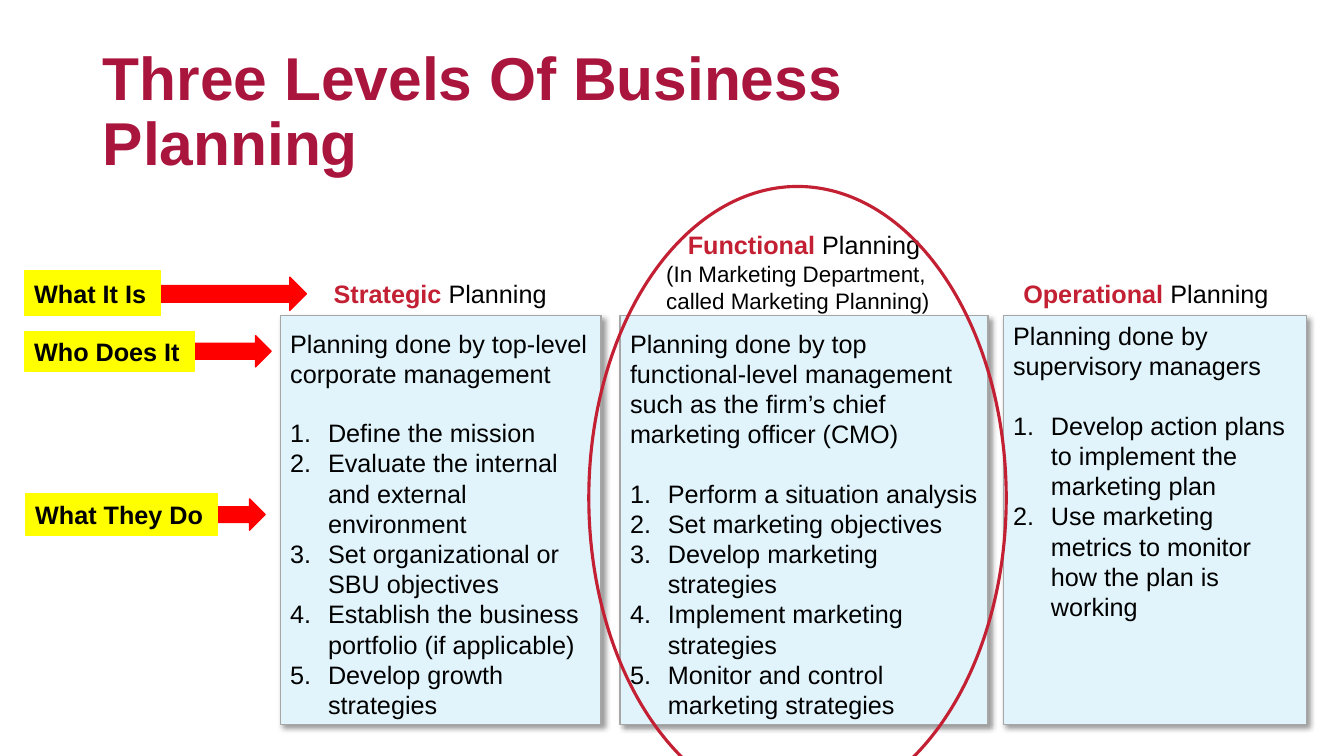
from dataclasses import dataclass

from lxml import etree
from pptx import Presentation
from pptx.dml.color import RGBColor
from pptx.enum.shapes import MSO_SHAPE
from pptx.enum.text import MSO_ANCHOR, MSO_AUTO_SIZE, PP_ALIGN
from pptx.oxml.ns import qn
from pptx.util import Inches, Pt

RECTANGLE, ARROW, ELLIPSE = MSO_SHAPE.RECTANGLE, MSO_SHAPE.RIGHT_ARROW, MSO_SHAPE.OVAL
TOP, MIDDLE, BOTTOM = MSO_ANCHOR.TOP, MSO_ANCHOR.MIDDLE, MSO_ANCHOR.BOTTOM
LEFT, CENTER = PP_ALIGN.LEFT, PP_ALIGN.CENTER
NO_AUTOFIT = MSO_AUTO_SIZE.NONE


@dataclass(frozen=True)
class Theme:
    font: str = "Arial"
    title: str = "AA153D"
    accent: str = "C32033"
    text: str = "000000"
    arrow: str = "FF0000"
    label: str = "FFFF00"
    panel: str = "E1F4FB"
    border: str = "A6A6A6"
    title_size: float = 43.2
    body_size: float = 18
    note_size: float = 16
    list_gap: float = 20.7
    list_indent: float = 27


THEME = Theme()

# Label, its box, and the box of the arrow behind it
ROW_LABELS = [
    ("What It Is", (0.24, 2.69, 1.35, 0.44), (1.48, 2.75, 1.56, 0.33)),
    ("Who Does It", (0.24, 3.29, 1.69, 0.39), (1.54, 3.33, 1.15, 0.31)),
    ("What They Do", (0.25, 4.9, 1.91, 0.41), (1.48, 4.95, 1.15, 0.31)),
]

PANEL_TOP, PANEL_HEIGHT = 3.13, 4.06

# Level, note, heading box, panel left and width, anchor, who does it, tasks
LEVELS = [
    ("Strategic ", None, (3.19, 2.71, 2.35, 0.41), (2.78, 3.18), BOTTOM,
     "Planning done by top-level corporate management",
     ["Define the mission",
      "Evaluate the internal and external environment",
      "Set organizational or SBU objectives",
      "Establish the business portfolio (if applicable)",
      "Develop growth strategies"]),
    ("Functional ", "(In Marketing Department, called Marketing Planning)",
     (6.51, 2.29, 2.93, 0.81), (6.15, 3.65), BOTTOM,
     "Planning done by top functional-level management such as the firm’s "
     "chief marketing officer (CMO)",
     ["Perform a situation analysis",
      "Set marketing objectives",
      "Develop marketing strategies",
      "Implement marketing strategies",
      "Monitor and control marketing strategies"]),
    ("Operational ", None, (10.01, 2.71, 2.71, 0.4), (9.95, 3.01), TOP,
     "Planning done by supervisory managers",
     ["Develop action plans to implement the marketing plan",
      "Use marketing metrics to monitor how the plan is working"]),
]


def inches(box):
    return [Inches(length) for length in box]


def add_run(paragraph, text, size=THEME.body_size, color=THEME.text, bold=False):
    run = paragraph.add_run()
    run.text = text
    run.font.name = THEME.font
    run.font.size = Pt(size)
    run.font.bold = bold
    run.font.color.rgb = RGBColor.from_string(color)


def add_figure(slide, kind, box, fill, line, line_width=1):
    figure = slide.shapes.add_shape(kind, *inches(box))
    figure.shadow.inherit = False
    if fill:
        figure.fill.solid()
        figure.fill.fore_color.rgb = RGBColor.from_string(fill)
    else:
        figure.fill.background()
    figure.line.color.rgb = RGBColor.from_string(line)
    figure.line.width = Pt(line_width)
    return figure


def frame_of(shape, anchor):
    frame = shape.text_frame
    frame.word_wrap = True
    frame.vertical_anchor = anchor
    frame.paragraphs[0].alignment = LEFT
    return frame


def add_drop_shadow(panel):
    effects = panel._element.spPr.find(qn("a:effectLst"))
    shadow = etree.SubElement(effects, qn("a:outerShdw"), blurRad=str(Pt(4)),
                              dist=str(Pt(3)), dir="2700000", algn="tl",
                              rotWithShape="0")
    color = etree.SubElement(shadow, qn("a:srgbClr"), val=THEME.text)
    etree.SubElement(color, qn("a:alpha"), val="40000")


def number_paragraph(paragraph):
    properties = paragraph._p.get_or_add_pPr()
    properties.set("marL", str(Pt(THEME.list_indent)))
    properties.set("indent", str(-Pt(THEME.list_indent)))
    etree.SubElement(properties, qn("a:buFont"), typeface=THEME.font)
    etree.SubElement(properties, qn("a:buAutoNum"), type="arabicPeriod")


def place_title(slide, box):
    title = slide.shapes.title
    title.left, title.top, title.width, title.height = inches(box)
    frame = frame_of(title, MIDDLE)
    frame.auto_size = NO_AUTOFIT
    heading = frame.paragraphs[0]
    heading.line_spacing = 0.9
    add_run(heading, "Three Levels Of Business Planning",
            THEME.title_size, THEME.title, True)


def add_row_label(slide, text, box, arrow_box):
    add_figure(slide, ARROW, arrow_box, THEME.arrow, THEME.arrow)
    label = add_figure(slide, RECTANGLE, box, THEME.label, THEME.label)
    add_run(frame_of(label, MIDDLE).paragraphs[0], text, bold=True)


def add_heading(slide, box, level, note):
    frame = frame_of(slide.shapes.add_textbox(*inches(box)), MIDDLE)
    name = frame.paragraphs[0]
    name.alignment = CENTER
    add_run(name, level, color=THEME.accent, bold=True)
    add_run(name, "Planning")
    if note:
        add_run(frame.add_paragraph(), note, THEME.note_size)


def add_panel(slide, box, anchor, planners, tasks):
    panel = add_figure(slide, RECTANGLE, box, THEME.panel, THEME.border)
    add_drop_shadow(panel)
    frame = frame_of(panel, anchor)
    frame.margin_right = Inches(0.08)
    add_run(frame.paragraphs[0], planners)
    for index, task in enumerate(tasks):
        item = frame.add_paragraph()
        item.alignment = LEFT
        if index == 0:
            item.space_before = Pt(THEME.list_gap)
        number_paragraph(item)
        add_run(item, task)


def main():
    deck = Presentation()
    deck.slide_width, deck.slide_height = Inches(13.33), Inches(7.5)
    slide = deck.slides.add_slide(deck.slide_layouts[5])

    place_title(slide, (0.92, 0.4, 9.6, 1.45))

    # Row labels with arrows
    for text, box, arrow_box in ROW_LABELS:
        add_row_label(slide, text, box, arrow_box)

    # One heading and panel per planning level
    for level, note, heading_box, (left, width), anchor, planners, tasks in LEVELS:
        add_heading(slide, heading_box, level, note)
        add_panel(slide, (left, PANEL_TOP, width, PANEL_HEIGHT),
                  anchor, planners, tasks)

    # Ring around the functional level
    add_figure(slide, ELLIPSE, (5.84, 1.85, 4.14, 6.18), None, THEME.accent, 2.25)

    deck.save("out.pptx")


if __name__ == "__main__":
    main()
